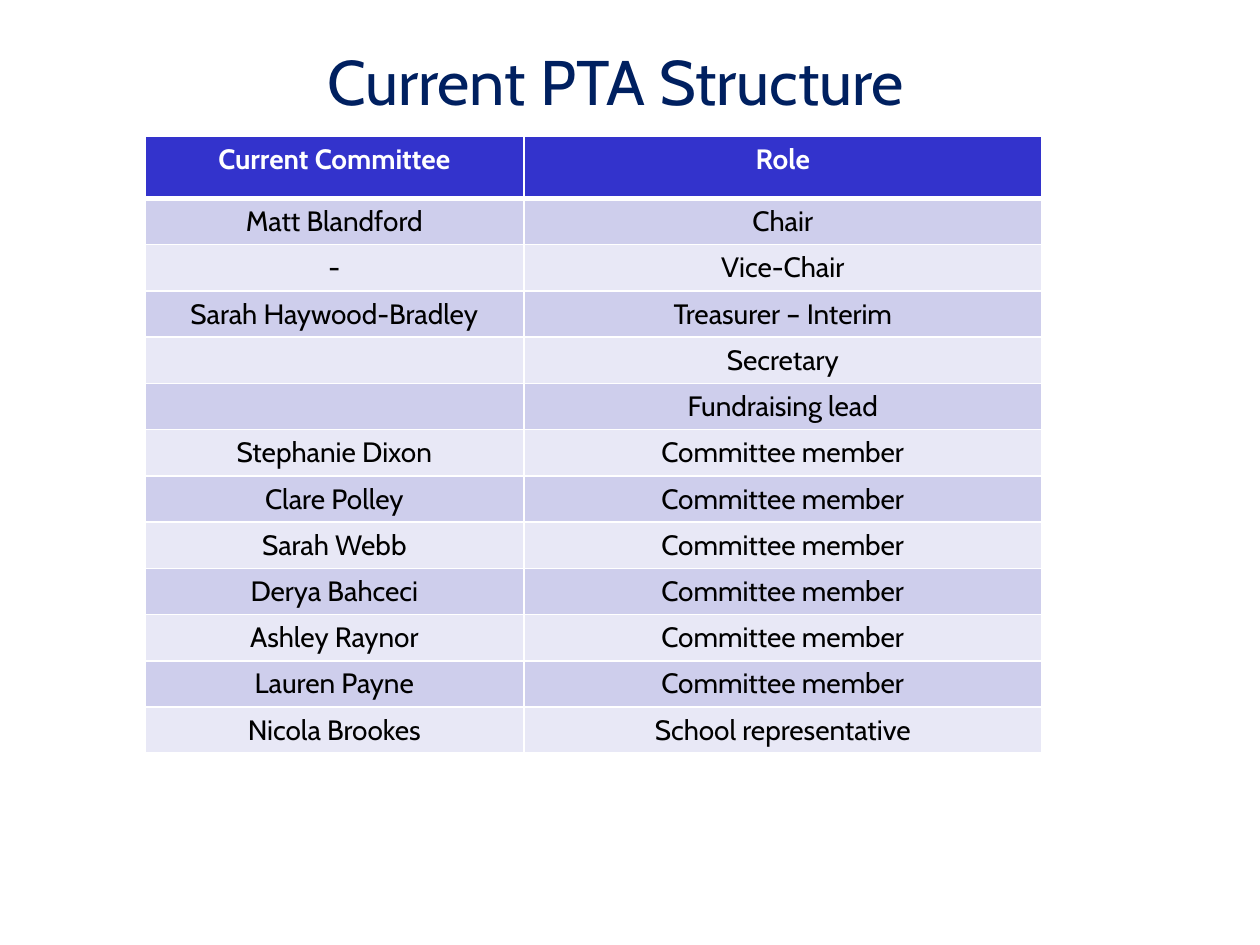
from lxml.etree import SubElement
from pptx import Presentation
from pptx.dml.color import RGBColor
from pptx.enum.text import MSO_ANCHOR, PP_ALIGN
from pptx.oxml.ns import qn
from pptx.util import Cm, Pt

FONT = "Cabin"
NAVY = RGBColor(0x00, 0x20, 0x60)
BLUE = RGBColor(0x33, 0x33, 0xCC)
LAVENDER = RGBColor(0xCE, 0xCE, 0xEC)
PALE = RGBColor(0xE8, 0xE8, 0xF6)
WHITE = RGBColor(0xFF, 0xFF, 0xFF)
BLACK = RGBColor(0x00, 0x00, 0x00)

HEADINGS = ("Current Committee", "Role")
MEMBER = "Committee member"
COMMITTEE = [
    ("Matt Blandford", "Chair"),
    ("-", "Vice-Chair"),
    ("Sarah Haywood-Bradley", "Treasurer – Interim"),
    ("", "Secretary"),
    ("", "Fundraising lead"),
    ("Stephanie Dixon", MEMBER),
    ("Clare Polley", MEMBER),
    ("Sarah Webb", MEMBER),
    ("Derya Bahceci", MEMBER),
    ("Ashley Raynor", MEMBER),
    ("Lauren Payne", MEMBER),
    ("Nicola Brookes", "School representative"),
]
COLUMN_WIDTHS = (Cm(7.64), Cm(10.44))
HEADER_HEIGHT = Cm(1.26)
ROW_HEIGHT = Cm(0.93)


def style_paragraph(paragraph, size, color, bold=False):
    paragraph.alignment = PP_ALIGN.CENTER
    font = paragraph.font
    font.name, font.size, font.bold = FONT, Pt(size), bold
    font.color.rgb = color


def add_title(slide, wording):
    title = slide.shapes.add_textbox(Cm(3.81), Cm(0.3), Cm(17.2), Cm(2.64))
    frame = title.text_frame
    frame.word_wrap = True
    frame.vertical_anchor = MSO_ANCHOR.MIDDLE
    frame.text = wording
    style_paragraph(frame.paragraphs[0], 36, NAVY)


def set_borders(cell, top, bottom):
    properties = cell._tc.get_or_add_tcPr()
    widths = {"a:lnL": 1, "a:lnR": 1, "a:lnT": top, "a:lnB": bottom}
    for position, (side, width) in enumerate(widths.items()):
        line = SubElement(properties, qn(side), w=str(Pt(width)))
        fill = SubElement(line, qn("a:solidFill"))
        SubElement(fill, qn("a:srgbClr"), val=str(WHITE))
        properties.insert(position, line)


def fill_row(table, index, wording, background, color):
    is_header = index == 0
    for column, words in enumerate(wording):
        cell = table.cell(index, column)
        cell.text = words
        style_paragraph(cell.text_frame.paragraphs[0], 16, color, is_header)
        cell.fill.solid()
        cell.fill.fore_color.rgb = background
        set_borders(cell, 3 if index == 1 else 1, 3 if is_header else 1)


def add_committee_table(slide):
    height = HEADER_HEIGHT + ROW_HEIGHT * len(COMMITTEE)
    table = slide.shapes.add_table(
        len(COMMITTEE) + 1, len(HEADINGS),
        Cm(2.92), Cm(2.74), sum(COLUMN_WIDTHS), height,
    ).table
    for column, width in zip(table.columns, COLUMN_WIDTHS):
        column.width = width
    for row in table.rows:
        row.height = ROW_HEIGHT
    table.rows[0].height = HEADER_HEIGHT

    fill_row(table, 0, HEADINGS, BLUE, WHITE)
    for index, entry in enumerate(COMMITTEE, start=1):
        fill_row(table, index, entry, LAVENDER if index % 2 else PALE, BLACK)


def main():
    presentation = Presentation()
    presentation.slide_width = Cm(25.4)
    presentation.slide_height = Cm(19.05)
    slide = presentation.slides.add_slide(presentation.slide_layouts[6])
    add_title(slide, "Current PTA Structure")
    add_committee_table(slide)
    presentation.save("out.pptx")


if __name__ == "__main__":
    main()
